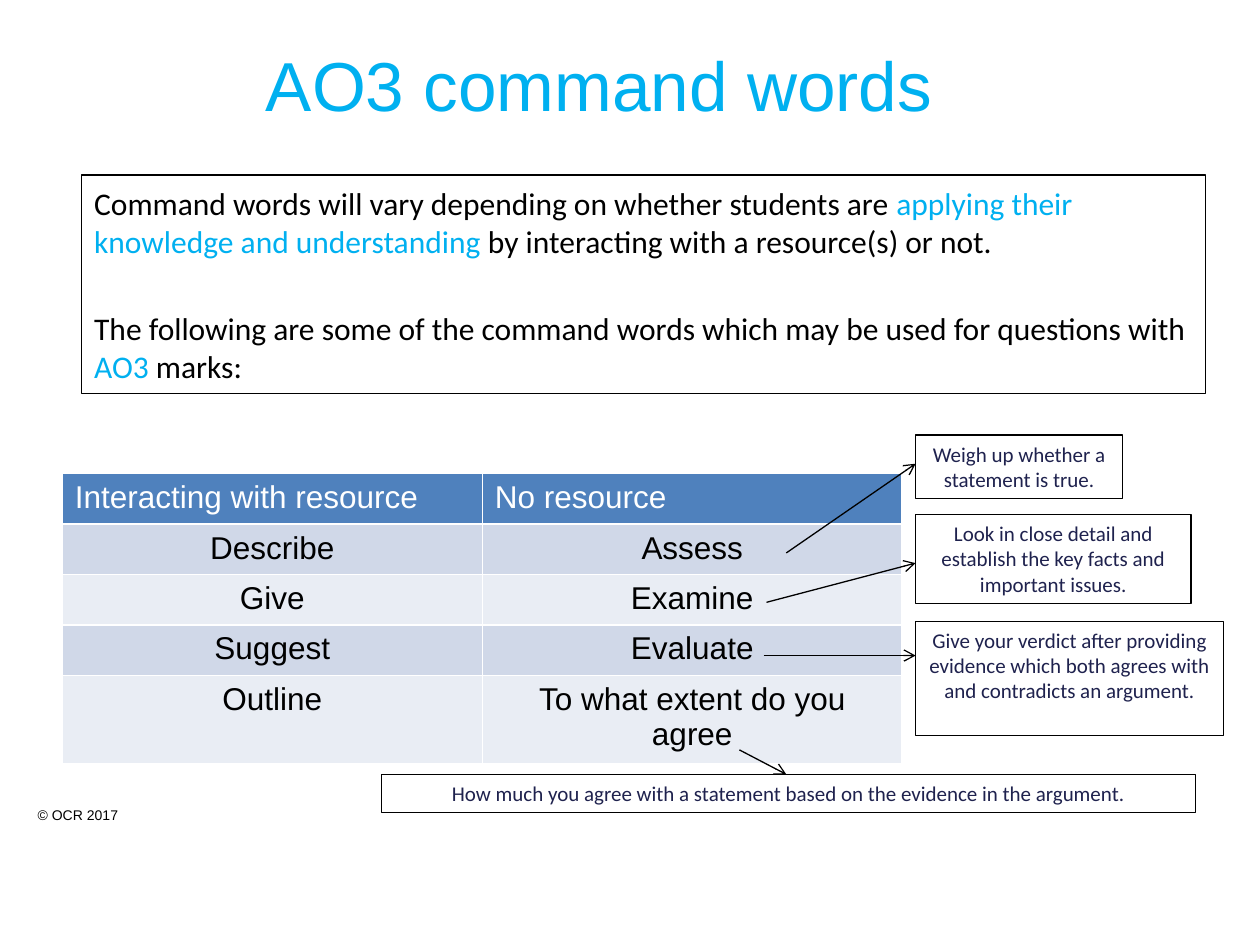
from lxml.etree import SubElement
from pptx import Presentation
from pptx.dml.color import RGBColor
from pptx.enum.shapes import MSO_CONNECTOR, MSO_SHAPE
from pptx.enum.text import MSO_ANCHOR, MSO_AUTO_SIZE, PP_ALIGN
from pptx.oxml.ns import qn
from pptx.util import Pt


def paint(color_format, color):
    color_format.rgb = RGBColor.from_string(color)


def write(paragraph, text, color, **values):
    span = paragraph.add_run()
    span.text = text
    for name, value in values.items():
        setattr(span.font, name, value)
    paint(span.font.color, color)


BLACK, WHITE, SKY, NAVY = "000000", "FFFFFF", "00B0F0", "1F224E"
TITLE = {"name": "Arial", "size": Pt(39.6)}
BODY = {"name": "Calibri", "size": Pt(18)}
CELL = {"name": "Arial", "size": Pt(18)}
NOTE = {"name": "Calibri", "size": Pt(12)}
CREDIT = {"name": "Arial", "size": Pt(8)}
FRAME = {"word_wrap": True, "auto_size": MSO_AUTO_SIZE.NONE, "vertical_anchor": MSO_ANCHOR.TOP}

deck = Presentation()
deck.slide_width, deck.slide_height = Pt(720), Pt(540)
page = deck.slides.add_slide(deck.slide_layouts[1])

credit = page.shapes.add_textbox(Pt(14.4), Pt(457.2), Pt(136), Pt(17.3))
credit.text_frame.word_wrap = True
write(credit.text_frame.paragraphs[0], "© OCR 2017", BLACK, **CREDIT)

title = page.shapes.title
title.left, title.top, title.width, title.height = Pt(0), Pt(21), Pt(684.7), Pt(54)
title.text_frame.auto_size = MSO_AUTO_SIZE.NONE
title.text_frame.vertical_anchor = MSO_ANCHOR.MIDDLE
heading = title.text_frame.paragraphs[0]
heading.alignment = PP_ALIGN.CENTER
write(heading, "AO3 command words", SKY, **TITLE)

body = page.placeholders[1]
body.left, body.top, body.width, body.height = Pt(46.6), Pt(100), Pt(642.4), Pt(124.8)
paint(body.line.color, BLACK)
body.line.width = Pt(0.75)
body.text_frame.auto_size = MSO_AUTO_SIZE.NONE
body.text_frame.margin_top = Pt(5)
introduction = [
    (0, [
        ("Command words will vary depending on whether students are ", BLACK),
        ("applying their knowledge and understanding", SKY),
        (" by interacting with a resource(s) or not.", BLACK),
    ]),
    (28.5, [
        ("The following are some of the command words which may be used for questions with ", BLACK),
        ("AO3 ", SKY),
        ("marks:", BLACK),
    ]),
]
for index, (gap, spans) in enumerate(introduction):
    paragraph = body.text_frame.paragraphs[0] if index == 0 else body.text_frame.add_paragraph()
    properties = paragraph._p.get_or_add_pPr()
    properties.set("marL", "0")
    properties.set("indent", "0")
    SubElement(properties, qn("a:buNone"))
    paragraph.space_before = Pt(gap)
    for text, color in spans:
        write(paragraph, text, color, **BODY)

words = [
    ("Interacting with resource", "No resource"),
    ("Describe", "Assess"),
    ("Give", "Examine"),
    ("Suggest", "Evaluate"),
    ("Outline", "To what extent do you agree"),
]
row_heights = [27.4] * 4 + [46.8]
table = page.shapes.add_table(
    len(words), 2, Pt(35.6), Pt(270.7), Pt(480), Pt(sum(row_heights))
).table
for column in table.columns:
    column.width = Pt(240)
for index, (row, height) in enumerate(zip(table.rows, row_heights)):
    row.height = Pt(height)
    header = index == 0
    fill = "4F81BD" if header else ("E9EDF4", "D0D8E8")[index % 2]
    for cell, text in zip(row.cells, words[index]):
        cell.fill.solid()
        paint(cell.fill.fore_color, fill)
        paragraph = cell.text_frame.paragraphs[0]
        paragraph.alignment = PP_ALIGN.LEFT if header else PP_ALIGN.CENTER
        write(paragraph, text, WHITE if header else BLACK, bold=False, **CELL)

notes = [
    (523.2, 248.6, 118.4, 36.3, "Weigh up whether a statement is true."),
    (523.2, 294, 157.4, 51,
     "Look in close detail and establish the key facts and important issues."),
    (523.2, 355, 176, 65.4,
     "Give your verdict after providing evidence which both agrees with and contradicts an argument."),
    (218, 442.5, 465.3, 21.8,
     "How much you agree with a statement based on the evidence in the argument."),
]
for left, top, width, height, text in notes:
    box = page.shapes.add_shape(
        MSO_SHAPE.RECTANGLE, Pt(left), Pt(top), Pt(width), Pt(height)
    )
    box.shadow.inherit = False
    box.fill.solid()
    paint(box.fill.fore_color, WHITE)
    paint(box.line.color, BLACK)
    box.line.width = Pt(0.75)
    for name, value in FRAME.items():
        setattr(box.text_frame, name, value)
    paragraph = box.text_frame.paragraphs[0]
    paragraph.alignment = PP_ALIGN.CENTER
    write(paragraph, text, NAVY, **NOTE)

arrows = [
    (449.3, 316, 523.2, 265),
    (438, 344.2, 523.2, 321.8),
    (436.4, 374.6, 523.2, 374.6),
    (422.5, 428.5, 449.3, 442.5),
]
for ends in arrows:
    arrow = page.shapes.add_connector(MSO_CONNECTOR.STRAIGHT, *map(Pt, ends))
    paint(arrow.line.color, BLACK)
    arrow.line.width = Pt(0.75)
    SubElement(arrow.line._get_or_add_ln(), qn("a:tailEnd"), type="arrow")
    SubElement(arrow._element.spPr, qn("a:effectLst"))

deck.save("out.pptx")
